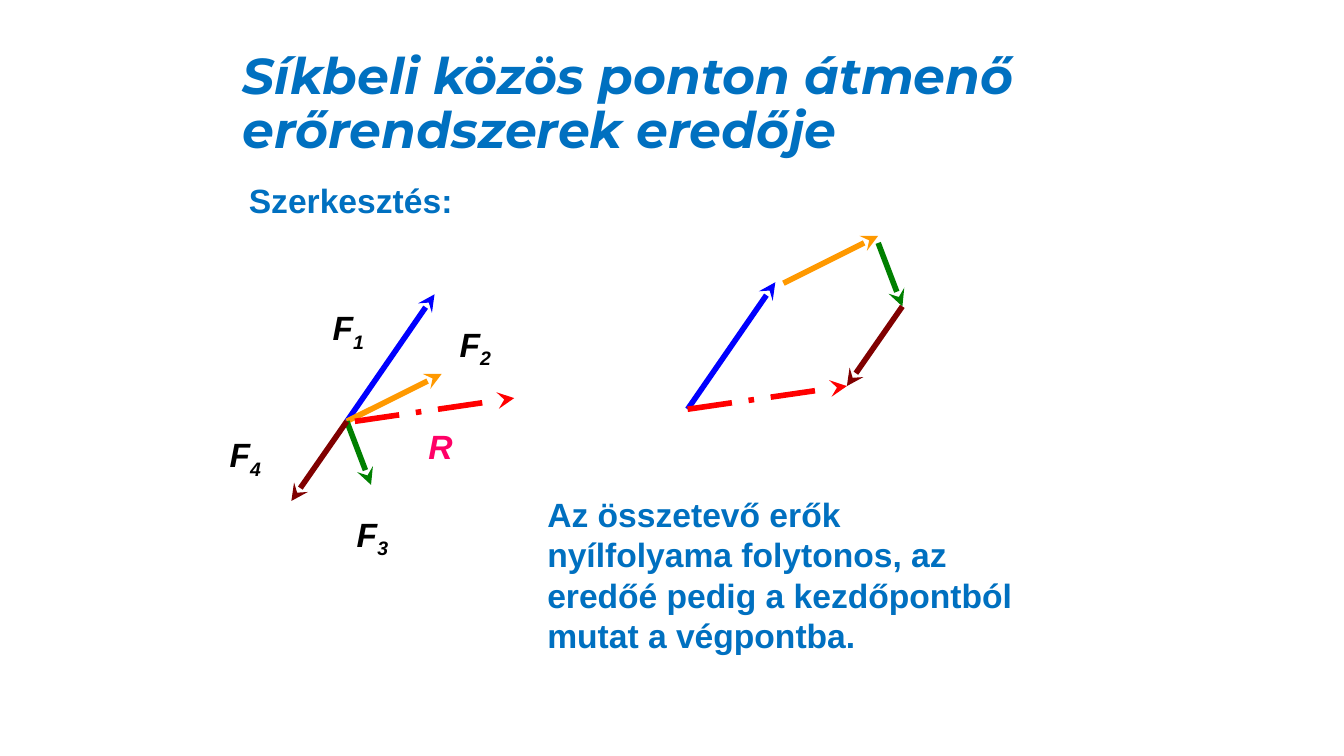
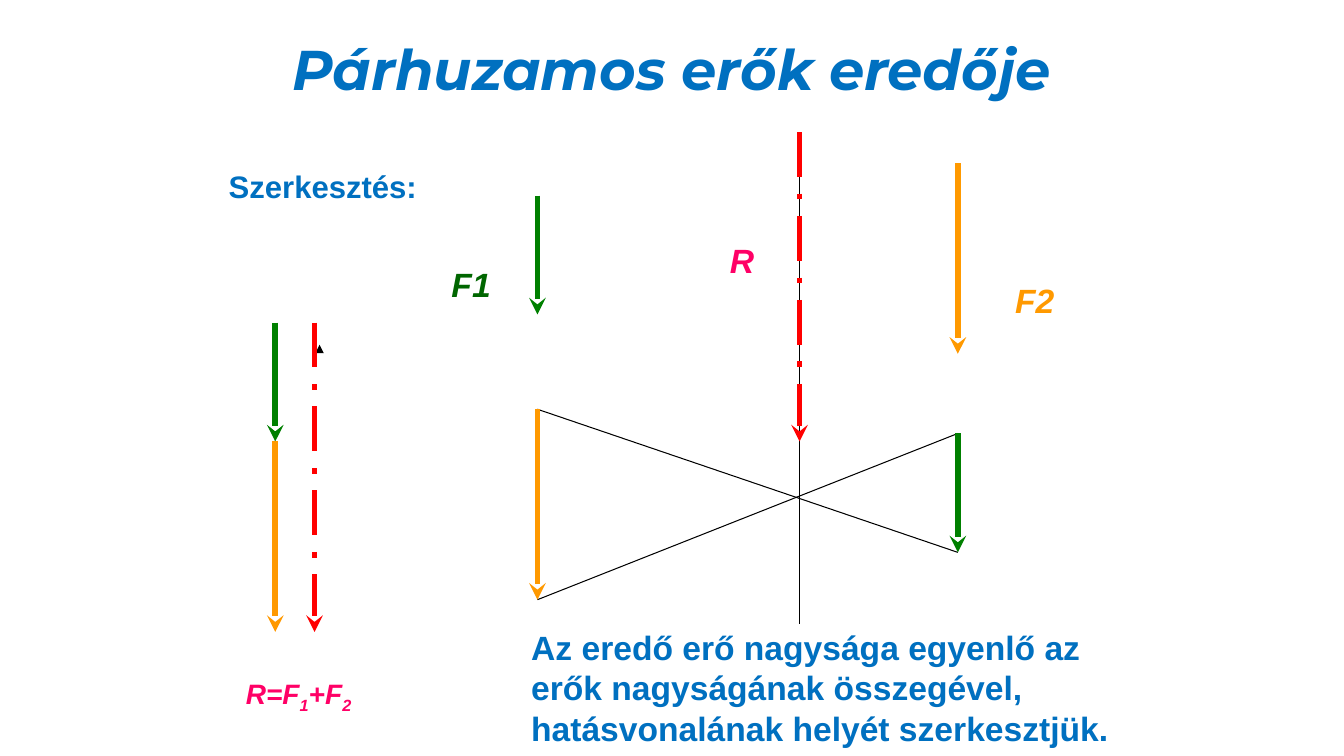
from lxml import etree
from pptx import Presentation
from pptx.dml.color import RGBColor
from pptx.enum.dml import MSO_LINE
from pptx.enum.shapes import MSO_CONNECTOR
from pptx.enum.text import MSO_ANCHOR, PP_ALIGN
from pptx.oxml.ns import qn
from pptx.util import Inches, Pt

STRAIGHT = MSO_CONNECTOR.STRAIGHT
DASH_DOT = MSO_LINE.LONG_DASH_DOT
TOP, MIDDLE = MSO_ANCHOR.TOP, MSO_ANCHOR.MIDDLE
LEFT, CENTER = PP_ALIGN.LEFT, PP_ALIGN.CENTER

TITLE_FONT, BODY_FONT = "Montserrat", "Arial"
SKY = RGBColor(0x00, 0x70, 0xC0)
BLUE = RGBColor(0x00, 0x00, 0xFF)
ORANGE = RGBColor(0xFF, 0x99, 0x00)
GREEN = RGBColor(0x00, 0x80, 0x00)
DARK_GREEN = RGBColor(0x00, 0x66, 0x00)
MAROON = RGBColor(0x80, 0x00, 0x00)
RED = RGBColor(0xFF, 0x00, 0x00)
PINK = RGBColor(0xFF, 0x00, 0x66)
BLACK = RGBColor(0x00, 0x00, 0x00)


def add_text(slide, box, parts, color=SKY, size=24, italic=False,
             font=BODY_FONT, align=LEFT, anchor=TOP):
    """Add a bold text; every second item of parts is a subscript."""
    shape = slide.shapes.add_textbox(*(Inches(value) for value in box))
    frame = shape.text_frame
    frame.word_wrap = True
    frame.vertical_anchor = anchor
    paragraph = frame.paragraphs[0]
    paragraph.alignment = align
    for index, part in enumerate(parts):
        run = paragraph.add_run()
        run.text = part
        run.font.name = font
        run.font.size = Pt(size)
        run.font.bold = True
        run.font.italic = italic
        run.font.color.rgb = color
        if index % 2:
            run.font._element.set("baseline", "-25000")
    return paragraph


def add_title(slide, box, text, size, align=LEFT):
    paragraph = add_text(slide, box, [text], size=size, italic=True,
                         font=TITLE_FONT, align=align, anchor=MIDDLE)
    paragraph.line_spacing = 0.9


def add_label(slide, left, top, parts, color=BLACK, size=24, width=0.8):
    add_text(slide, (left, top, width, 0.5), parts, color, size, italic=True)


def add_line(slide, start, end, color=BLACK, width=0.75, head=None, dash=None):
    line = slide.shapes.add_connector(
        STRAIGHT, *(Inches(value) for value in (*start, *end)))
    line.line.color.rgb = color
    line.line.width = Pt(width)
    if dash:
        line.line.dash_style = dash
    properties = line._element.spPr
    if head:
        etree.SubElement(properties.find(qn("a:ln")), qn("a:tailEnd"), type=head)
    etree.SubElement(properties, qn("a:effectLst"))


def add_force(slide, start, vector, color, dash=None):
    end = (start[0] + vector[0], start[1] + vector[1])
    add_line(slide, start, end, color, 4, "stealth", dash)


def build_concurrent_forces(slide):
    add_title(slide, (2.31, 0.32, 8.62, 1.45),
              "Síkbeli közös ponton átmenő erőrendszerek eredője", 36)
    add_text(slide, (2.37, 1.74, 2.33, 0.51), ["Szerkesztés:"])

    # Each force: vector, colour, start in the force polygon, label place
    forces = [
        ((0.87, -1.26), BLUE, (6.82, 4.06), (3.2, 3)),
        ((0.94, -0.47), ORANGE, (7.77, 2.81), (4.46, 3.16)),
        ((0.24, 0.63), GREEN, (8.71, 2.41), (3.44, 5.05)),
        ((-0.55, 0.79), MAROON, (8.95, 3.04), (2.18, 4.26)),
    ]
    for number, (vector, color, polygon_start, label) in enumerate(forces, 1):
        add_force(slide, (3.44, 4.18), vector, color)
        add_force(slide, polygon_start, vector, color)
        add_label(slide, *label, ["F", str(number)])

    # Resultant in both drawings
    for start in ((3.52, 4.18), (6.82, 4.06)):
        add_force(slide, start, (1.58, -0.23), RED, DASH_DOT)
    add_label(slide, 4.15, 4.18, ["R"], PINK)

    add_text(slide, (5.33, 4.85, 4.96, 1.72),
             ["Az összetevő erők nyílfolyama folytonos, az eredőé pedig "
              "a kezdőpontból mutat a végpontba."])


def build_parallel_forces(slide):
    add_title(slide, (2.35, 0.21, 8.62, 1.02), "Párhuzamos erők eredője", 40, CENTER)
    add_text(slide, (2.17, 1.61, 2.53, 0.5), ["Szerkesztés:"], size=22.2)

    first, second = 1.18, 1.89
    resultant = first + second
    left, middle, right = 5.33, 7.93, 9.5
    left_top, right_top = 4.06, 4.3

    # Construction lines: crossing diagonals and the line of action
    add_line(slide, (left, left_top + second), (right, right_top))
    add_line(slide, (left, left_top), (right, right_top + first))
    add_line(slide, (middle, 1.55), (middle, 6.19))
    add_line(slide, (3.17, 3.5), (3.17, 3.42), head="triangle")

    # Forces in place, swapped for the construction, and summed
    for x, y, length, color in (
            (left, 1.94, first, GREEN),
            (right, 1.62, second, ORANGE),
            (left, left_top, second, ORANGE),
            (right, right_top, first, GREEN),
            (2.73, 3.2, first, GREEN),
            (2.73, 3.2 + first, second, ORANGE)):
        add_force(slide, (x, y), (0, length), color)
    for start in ((3.12, 3.2), (middle, 1.31)):
        add_force(slide, start, (0, resultant), RED, DASH_DOT)

    add_label(slide, 4.38, 2.57, ["F1"], DARK_GREEN)
    add_label(slide, 9.97, 2.73, ["F2"], ORANGE)
    add_label(slide, 7.14, 2.33, ["R"], PINK)
    add_label(slide, 2.34, 6.66, ["R=F", "1", "+F", "2"], PINK, 20, 1.89)

    add_text(slide, (5.17, 6.17, 6.06, 1.31),
             ["Az eredő erő nagysága egyenlő az erők nagyságának összegével, "
              "hatásvonalának helyét szerkesztjük."])


def main():
    presentation = Presentation()
    presentation.slide_width = Inches(13.33)
    presentation.slide_height = Inches(7.5)
    blank = presentation.slide_layouts[6]
    for build in (build_concurrent_forces, build_parallel_forces):
        build(presentation.slides.add_slide(blank))
    presentation.save("out.pptx")


if __name__ == "__main__":
    main()
